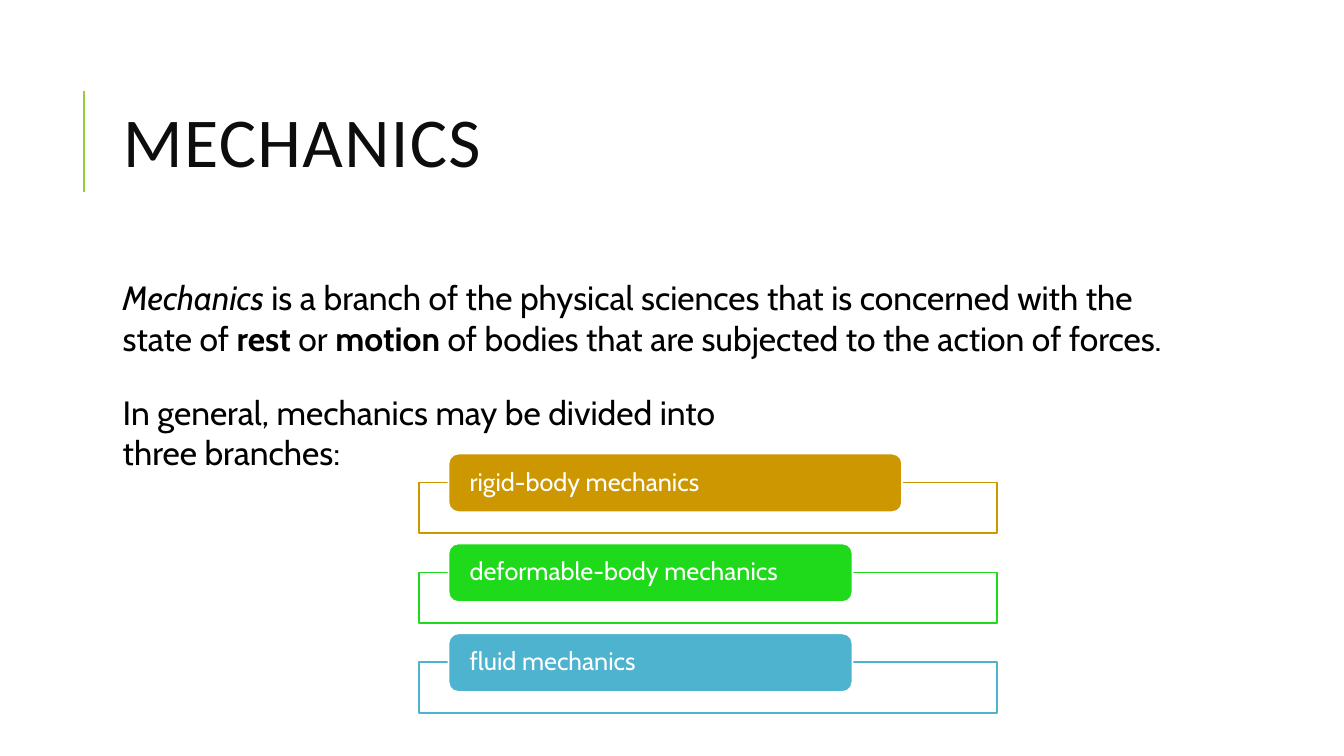
from lxml import etree
from pptx import Presentation
from pptx import util as u
from pptx.dml.color import RGBColor
from pptx.enum import shapes, text
from pptx.oxml import ns

BLACK = RGBColor(0x00, 0x00, 0x00)
INK = RGBColor(0x0D, 0x0D, 0x0D)
WHITE = RGBColor(0xFF, 0xFF, 0xFF)
LIME = RGBColor(0x99, 0xCB, 0x38)
GOLD = RGBColor(0xCC, 0x97, 0x00)
GREEN = RGBColor(0x1E, 0xDA, 0x1A)
BLUE = RGBColor(0x4E, 0xB3, 0xCF)

# Content: paragraphs are lists of (text, style) runs
TITLE = "MECHANICS"
DEFINITION = [
    [("Mechanics ", "italic"),
     ("is a branch of the physical sciences that is concerned with the", "")],
    [("state of ", ""), ("rest", "bold"), (" or ", ""), ("motion", "bold"),
     (" of bodies that are subjected to the action of forces.", "")],
]
DIVISION = [[("In general, mechanics may be divided into three branches:", "")]]
BRANCHES = [  # label, colour, width of the label
    ("rigid-body mechanics", GOLD, 324),
    ("deformable-body mechanics", GREEN, 288.5),
    ("fluid mechanics", BLUE, 288.5),
]

# Layout in points
TEXT_LEFT = 80.6
BRANCH_TOP, BRANCH_STEP = 324, 64.2
FRAME_LEFT, FRAME_DROP, FRAME_WIDTH, FRAME_HEIGHT = 299.5, 20.7, 412.6, 36
LABEL_LEFT, LABEL_HEIGHT, LABEL_INSET = 320.4, 41.8, 13


def add_run(paragraph, words, size, color, font="Cabin", style=""):
    run = paragraph.add_run()
    run.text = words
    run.font.name = font
    run.font.size = u.Pt(size)
    run.font.color.rgb = color
    run.font.italic = style == "italic"
    run.font.bold = style == "bold"
    return run


def add_text(slide, top, width, paragraphs):
    box = slide.shapes.add_textbox(u.Pt(TEXT_LEFT), u.Pt(top), u.Pt(width), u.Pt(65.5))
    frame = box.text_frame
    frame.word_wrap = True
    for index, runs in enumerate(paragraphs):
        paragraph = frame.add_paragraph() if index else frame.paragraphs[0]
        for words, style in runs:
            add_run(paragraph, words, 24, BLACK, style=style)


def add_box(slide, kind, left, top, width, height, fill, line):
    shape = slide.shapes.add_shape(kind, u.Pt(left), u.Pt(top), u.Pt(width), u.Pt(height))
    shape.shadow.inherit = False
    shape.fill.solid()
    shape.fill.fore_color.rgb = fill
    shape.line.color.rgb = line
    shape.line.width = u.Pt(1.25)
    return shape


def add_branch(slide, top, label, color, width):
    frame = add_box(slide, shapes.MSO_SHAPE.RECTANGLE, FRAME_LEFT, top + FRAME_DROP,
                    FRAME_WIDTH, FRAME_HEIGHT, WHITE, color)
    fill_color = frame.fill._xPr.find(ns.qn("a:solidFill"))[0]
    etree.SubElement(fill_color, ns.qn("a:alpha"), val="90000")

    pill = add_box(slide, shapes.MSO_SHAPE.ROUNDED_RECTANGLE, LABEL_LEFT, top,
                   width, LABEL_HEIGHT, color, WHITE)
    body = pill.text_frame
    body.word_wrap = True
    body.vertical_anchor = text.MSO_ANCHOR.MIDDLE
    body.margin_left = body.margin_right = u.Pt(LABEL_INSET)
    body.margin_top = body.margin_bottom = 0
    paragraph = body.paragraphs[0]
    paragraph.alignment = text.PP_ALIGN.LEFT
    paragraph.line_spacing = 0.9
    add_run(paragraph, label, 18, WHITE)


def main():
    presentation = Presentation()
    presentation.slide_width, presentation.slide_height = u.Pt(960), u.Pt(540)
    slide = presentation.slides.add_slide(presentation.slide_layouts[5])

    # Accent line beside the title
    accent = slide.shapes.add_connector(shapes.MSO_CONNECTOR.STRAIGHT,
                                        u.Pt(60), u.Pt(137), u.Pt(60), u.Pt(65))
    accent.line.color.rgb = LIME
    accent.line.width = u.Pt(1.5)
    etree.SubElement(accent._element.spPr, ns.qn("a:effectLst"))

    # Title
    title = slide.shapes.title
    title.left, title.top = u.Pt(TEXT_LEFT), u.Pt(46)
    title.width, title.height = u.Pt(765.4), u.Pt(118)
    title.text_frame.auto_size = text.MSO_AUTO_SIZE.NONE
    title.text_frame.vertical_anchor = text.MSO_ANCHOR.MIDDLE
    heading = title.text_frame.paragraphs[0]
    heading.alignment = text.PP_ALIGN.LEFT
    heading.line_spacing = 0.8
    run = add_run(heading, TITLE, 50, INK, font="Calibri")
    run.font._element.set("spc", "100")

    # Body text
    add_text(slide, 194.4, 800, DEFINITION)
    add_text(slide, 276.5, 437.8, DIVISION)

    # Branches
    for index, branch in enumerate(BRANCHES):
        add_branch(slide, BRANCH_TOP + index * BRANCH_STEP, *branch)

    presentation.save("out.pptx")


if __name__ == "__main__":
    main()
